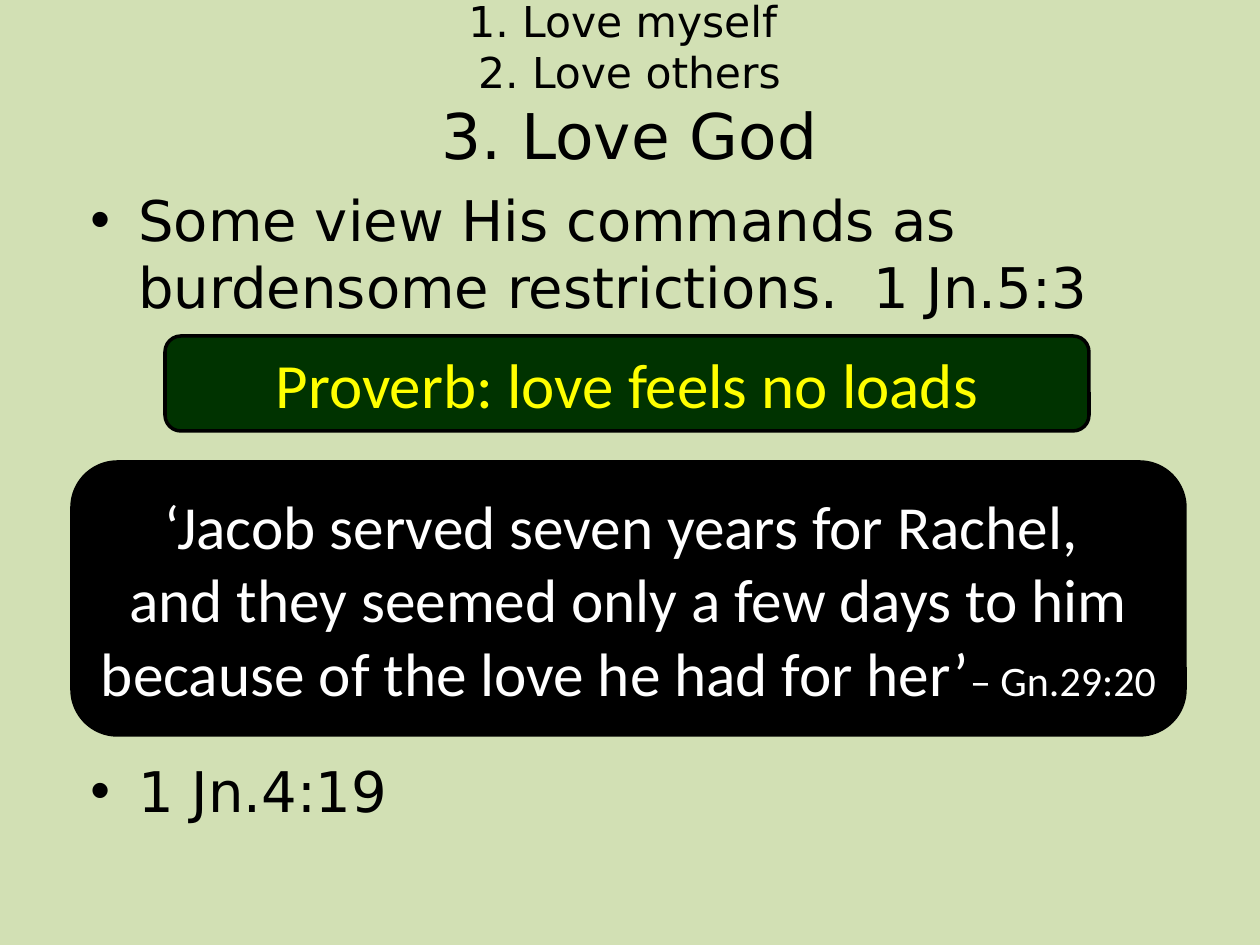
import pptx
import pptx.dml.color
import pptx.enum.shapes
import pptx.enum.text
import pptx.oxml.ns
import pptx.util
from lxml import etree

RGB = pptx.dml.color.RGBColor
BACKGROUND = RGB(0xD2, 0xE0, 0xB4)
BLACK = RGB(0x00, 0x00, 0x00)
WHITE = RGB(0xFF, 0xFF, 0xFF)
GREEN = RGB(0x00, 0x33, 0x00)
YELLOW = RGB(0xFF, 0xFF, 0x00)

HEADING_FONT = "DejaVu Sans"
PANEL_FONT = "Calibri"
EMU_PER_PX = 914400 / 126
ALIGN = pptx.enum.text.PP_ALIGN
ANCHOR = pptx.enum.text.MSO_ANCHOR


def px(n):
    return pptx.util.Emu(round(n * EMU_PER_PX))


def add_text(p, text, *, size, font, color):
    """Append text to a paragraph; each newline becomes a line break."""
    for i, line in enumerate(text.split("\n")):
        if i:
            p.add_line_break()
        if line:
            r = p.add_run()
            r.text = line
            r.font.size = pptx.util.Pt(size)
            r.font.name = font
            r.font.color.rgb = color


class SlideBuilder:
    def __init__(self, prs):
        self.s = prs.slides.add_slide(prs.slide_layouts[6])
        fill = self.s.background.fill
        fill.solid()
        fill.fore_color.rgb = BACKGROUND

    def fill_text(self, sp, runs, font, color, align, anchor):
        tf = sp.text_frame
        tf.word_wrap = True
        tf.vertical_anchor = anchor
        p = tf.paragraphs[0]
        p.alignment = align
        for text, size in runs:
            add_text(p, text, size=size, font=font, color=color)
        return p

    def textbox(self, box, runs, align=ALIGN.LEFT, anchor=ANCHOR.TOP):
        sp = self.s.shapes.add_textbox(*map(px, box))
        return self.fill_text(sp, runs, HEADING_FONT, BLACK, align, anchor)

    def bullet(self, box, text):
        p = self.textbox(box, [(text, 32)])
        pPr = p._p.get_or_add_pPr()
        pPr.set("marL", str(px(48)))
        pPr.set("indent", str(-px(48)))
        qn = pptx.oxml.ns.qn
        etree.SubElement(pPr, qn("a:buFont")).set("typeface", "Arial")
        etree.SubElement(pPr, qn("a:buChar")).set("char", "•")

    def panel(self, box, runs, fill, color):
        kind = pptx.enum.shapes.MSO_SHAPE.ROUNDED_RECTANGLE
        sp = self.s.shapes.add_shape(kind, *map(px, box))
        sp.shadow.inherit = False
        sp.fill.solid()
        sp.fill.fore_color.rgb = fill
        sp.line.color.rgb = BLACK
        sp.line.width = pptx.util.Pt(2)
        self.fill_text(sp, runs, PANEL_FONT, color,
                       ALIGN.CENTER, ANCHOR.MIDDLE)


def main():
    prs = pptx.Presentation()
    prs.slide_width, prs.slide_height = px(1260), px(945)
    slide = SlideBuilder(prs)

    # Title
    slide.textbox(
        (94, 10, 1071, 147),
        [("1. Love myself \n2. Love others\n", 24.3), ("3. Love God", 36)],
        ALIGN.CENTER, ANCHOR.MIDDLE)

    # Bullets
    slide.bullet((78, 179, 1102, 150),
                 "Some view His commands as burdensome restrictions.  1 Jn.5:3")
    slide.bullet((78, 750, 1102, 80), "1 Jn.4:19")

    # Proverb and quotation
    slide.panel((165, 336, 924, 95),
                [("Proverb: love feels no loads", 36)], GREEN, YELLOW)
    slide.panel(
        (72, 462, 1113, 273),
        [("‘Jacob served seven years for Rachel, \n"
          "and they seemed only a few days to him "
          "because of the love he had for her’", 35),
         ("– Gn.29:20", 24)],
        BLACK, WHITE)

    prs.save("out.pptx")


if __name__ == "__main__":
    main()
